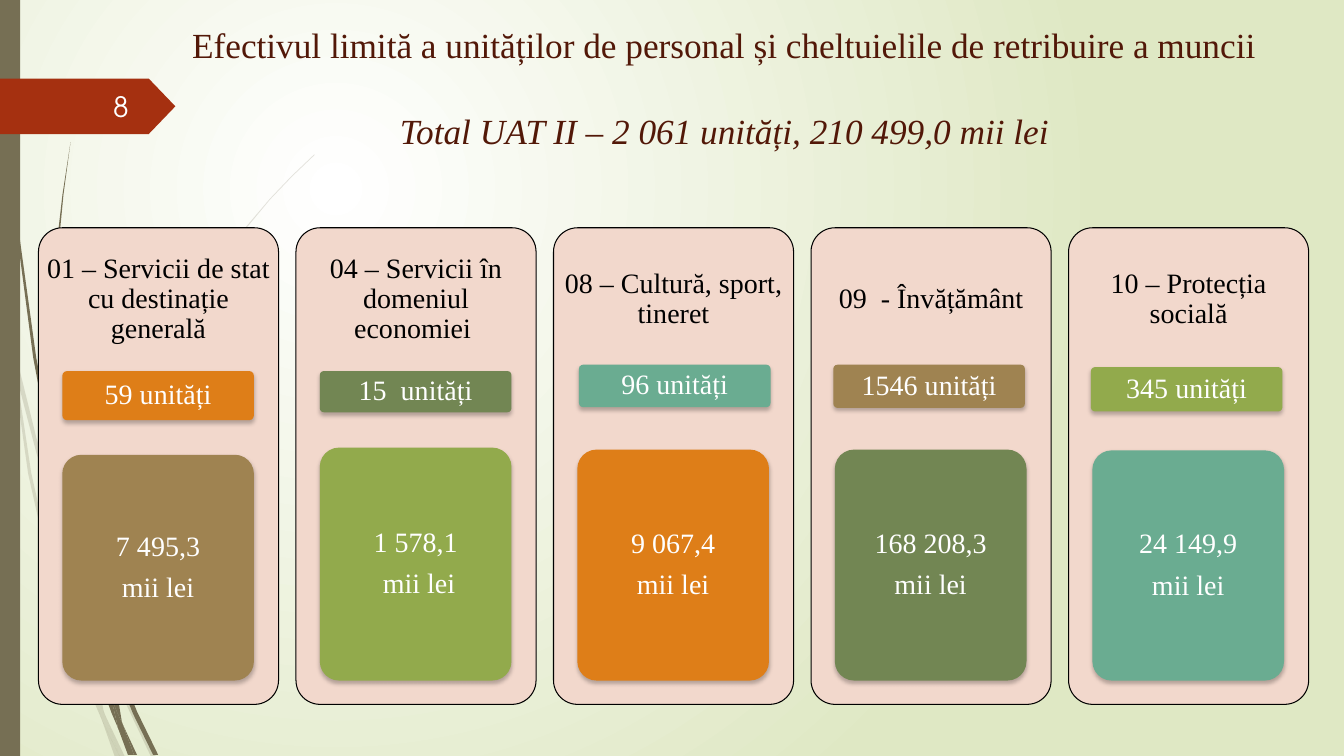
from lxml.etree import SubElement
from pptx import Presentation
from pptx.dml.color import RGBColor
from pptx.enum.shapes import MSO_SHAPE as Preset
from pptx.enum.text import MSO_ANCHOR as Anchor, PP_ALIGN as Align
from pptx.oxml.ns import qn
from pptx.util import Cm, Pt

SERIF = "Times New Roman"
OLIVE, RUST, ORANGE, GREEN = "766F54", "A53010", "DE7E18", "728653"
TEAL, BROWN, LIME, PINK = "6AAC91", "9F8351", "92AA4C", "F2D8CC"
WHITE, BLACK, MAROON = "FFFFFF", "000000", "521808"

# Outline points are in hundredths of an inch.
PALE_WISPS = [
    [(11, 350), (9, 322), (0, 282), (0, 299), (10, 344)],
    [(58, 522), (84, 599), (85, 586), (62, 520), (36, 434), (14, 345), (17, 376), (36, 449)],
    [(92, 607), (88, 596), (88, 610), (123, 694), (150, 751), (155, 751), (127, 692)],
    [(119, 751), (124, 751), (105, 711)],
    [(93, 683), (70, 619), (48, 545), (31, 469), (17, 376), (11, 350), (28, 470),
     (45, 546), (65, 621), (92, 693), (101, 714), (99, 707)],
    [(84, 599), (87, 646), (93, 683), (96, 692), (105, 711), (103, 706), (91, 646),
     (88, 610), (88, 608)],
    [(88, 584), (95, 522), (110, 462), (132, 404), (160, 349), (192, 296), (229, 245),
     (268, 198), (290, 175), (312, 154), (312, 153), (289, 175), (268, 197), (228, 244),
     (190, 294), (158, 348), (129, 403), (107, 461), (91, 522), (85, 584), (85, 586), (88, 596)],
    [(101, 714), (114, 751), (119, 751)],
    [(96, 692), (93, 683), (99, 707), (101, 714), (119, 751), (105, 711)],
]
DARK_WISPS = [
    [(7, 110), (17, 233), (33, 355), (56, 477), (57, 481), (55, 457), (55, 453),
     (36, 355), (19, 232), (8, 109), (5, 48), (4, 0), (3, 0), (4, 48)],
    [(113, 649), (110, 641), (111, 656), (132, 708), (152, 749), (157, 749), (136, 706)],
    [(110, 691), (98, 657), (83, 608), (72, 556), (64, 505), (57, 477), (68, 557),
     (79, 608), (93, 659), (111, 708), (117, 722), (116, 717)],
    [(60, 472), (58, 453), (54, 401), (54, 349), (58, 245), (63, 193), (70, 141),
     (62, 193), (56, 245), (52, 349), (52, 399), (55, 449)],
    [(133, 749), (136, 749), (122, 719)],
    [(117, 722), (127, 749), (131, 749)],
    [(106, 645), (110, 691), (116, 706), (122, 719), (121, 716), (111, 656), (109, 651)],
    [(116, 706), (110, 691), (116, 717), (117, 722), (130, 749), (133, 749), (122, 719)],
]

COLUMNS = [
    ("01 – Servicii de stat cu destinație generală",
     "59 unități", ORANGE, (0.6, 3.61, 1.24), ("7 495,3", "mii lei"), BROWN, 5.72),
    ("04 – Servicii în domeniul economiei ",
     "15  unități", GREEN, (0.6, 3.61, 1.04), ("1 578,1", " mii lei"), LIME, 5.54),
    ("08 – Cultură, sport, tineret",
     "96 unități", TEAL, (0.64, 3.45, 1.07), ("9 067,4", "mii lei"), ORANGE, 5.59),
    ("09  - Învățământ",
     "1546 unități", BROWN, (0.56, 3.45, 1.09), ("168 208,3", "mii lei"), GREEN, 5.59),
    ("10 – Protecția socială",
     "345 unități", LIME, (0.56, 3.51, 1.12), ("24 149,9", "mii lei"), TEAL, 5.61),
]


def color(value):
    return RGBColor.from_string(value)


def paint(shape, fill, line=None):
    shape.shadow.inherit = False
    shape.fill.solid()
    shape.fill.fore_color.rgb = color(fill)
    if line:
        shape.line.color.rgb = color(line)
        shape.line.width = Pt(0.75)
    else:
        shape.line.fill.background()


def add_preset(slide, preset, box, fill, line=None, adjustment=None):
    shape = slide.shapes.add_shape(preset, *map(Cm, box))
    paint(shape, fill, line)
    if adjustment is not None:
        shape.adjustments[0] = adjustment
    return shape


def add_shadow(shape):
    effects = shape.element.spPr.find(qn("a:effectLst"))
    shadow = SubElement(effects, qn("a:outerShdw"), blurRad=str(Pt(3)), dist=str(Pt(2)),
                        dir="5400000", algn="ctr", rotWithShape="0")
    shade = SubElement(shadow, qn("a:srgbClr"), val=BLACK)
    SubElement(shade, qn("a:alpha"), val="25000")


def write(shape, lines, fill, size=20, font=SERIF, align=Align.CENTER,
          anchor=Anchor.MIDDLE, inset=0.15, spacing=0.9, gap=8):
    frame = shape.text_frame
    frame.word_wrap = True
    frame.vertical_anchor = anchor
    frame.margin_left = frame.margin_right = Cm(inset)
    frame.margin_top = frame.margin_bottom = Cm(0.1)
    for index, line in enumerate(lines):
        paragraph = frame.add_paragraph() if index else frame.paragraphs[0]
        paragraph.text = line
        paragraph.alignment = align
        paragraph.line_spacing = spacing
        paragraph.space_before = Pt(gap if index else 0)
        paragraph.font.name = font
        paragraph.font.size = Pt(size)
        paragraph.font.color.rgb = color(fill)
    return frame


def add_background(slide):
    fill = slide.background.fill
    fill.gradient()
    for stop, value in zip(fill.gradient_stops, (WHITE, "DFE8C4")):
        stop.color.rgb = color(value)
    gradient = next(slide.element.iter(qn("a:gradFill")))
    gradient.remove(gradient.find(qn("a:lin")))
    circle = SubElement(gradient, qn("a:path"), path="circle")
    SubElement(circle, qn("a:fillToRect"), l="50000", t="50000", r="100000", b="100000")


def add_wisps(slide, outlines, alpha=None):
    for start, *points in outlines:
        builder = slide.shapes.build_freeform(*start, scale=Cm(2.54) / 100)
        builder.add_line_segments(points)
        wisp = builder.convert_to_shape()
        paint(wisp, OLIVE)
        if alpha:
            shade = next(wisp.element.spPr.iter(qn("a:srgbClr")))
            SubElement(shade, qn("a:alpha"), val=str(alpha * 1000))


def add_page_tag(slide, box):
    left, top, width, height = box
    add_preset(slide, Preset.PENTAGON, box, RUST, adjustment=0.48)
    number = slide.shapes.add_textbox(
        Cm(left + 1.47), Cm(top + 0.2), Cm(width - 2.5), Cm(height - 0.4))
    write(number, ["8"], "FEFFFF", font="TeX Gyre Adventor", align=Align.RIGHT, spacing=1)


def add_title(slide, box):
    title = slide.shapes.add_textbox(*map(Cm, box))
    frame = write(title, [
        "Efectivul limită a unităților de personal și cheltuielile de retribuire a muncii",
        "Total UAT II – 2 061 unități, 210 499,0 mii lei",
    ], MAROON, size=25.2, anchor=Anchor.TOP, inset=0, spacing=1, gap=31)
    frame.paragraphs[1].font.italic = True


def add_column(slide, box, column):
    heading, units, units_fill, units_place, amount, amount_fill, amount_top = column
    left, top, width, height = box
    inner_width = 4.83
    add_preset(slide, Preset.ROUNDED_RECTANGLE, box, PINK, BLACK, 0.1)
    label = slide.shapes.add_textbox(Cm(left), Cm(top), Cm(width), Cm(3.6))
    write(label, [heading], BLACK, inset=0.2)

    shift, units_top, units_height = units_place
    tiles = [
        ((left + shift, top + units_top, inner_width, units_height), units_fill, [units]),
        ((left + 0.6, top + amount_top, inner_width, height - 0.6 - amount_top),
         amount_fill, amount),
    ]
    for tile_box, fill, lines in tiles:
        tile = add_preset(slide, Preset.ROUNDED_RECTANGLE, tile_box, fill, adjustment=0.1)
        add_shadow(tile)
        write(tile, lines, WHITE)


def main():
    presentation = Presentation()
    presentation.slide_width, presentation.slide_height = Cm(33.87), Cm(19.05)
    slide = presentation.slides.add_slide(presentation.slide_layouts[6])
    add_background(slide)
    add_wisps(slide, PALE_WISPS, alpha=20)
    add_wisps(slide, DARK_WISPS)
    add_preset(slide, Preset.RECTANGLE, (0, 0, 0.51, 19.05), OLIVE)
    add_page_tag(slide, (0, 1.98, 4.42, 1.4))
    add_title(slide, (4.57, 0.48, 27.38, 3.25))
    for index, column in enumerate(COLUMNS):
        add_column(slide, (0.97 + 6.49 * index, 5.74, 6.05, 12.01), column)
    presentation.save("out.pptx")


if __name__ == "__main__":
    main()
